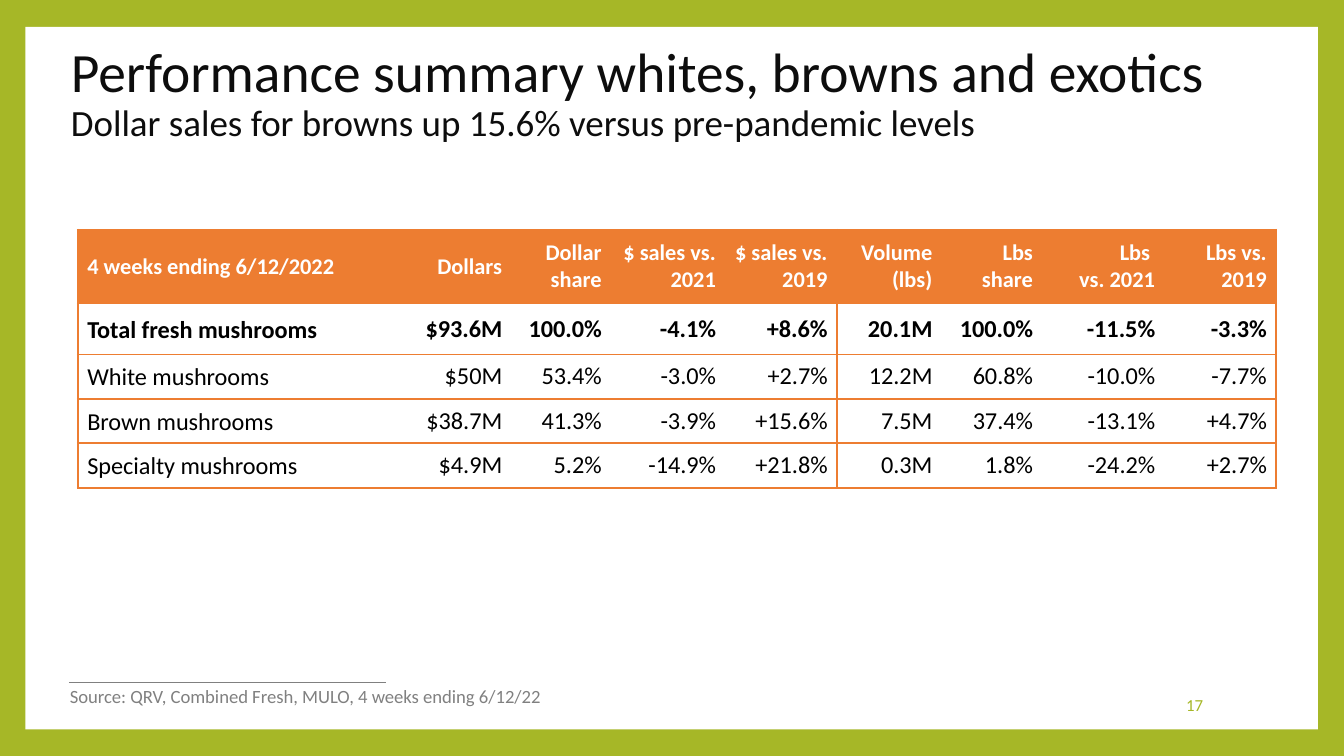
from lxml import etree
from pptx import Presentation
from pptx.dml.color import RGBColor
from pptx.enum.shapes import MSO_CONNECTOR, MSO_SHAPE
from pptx.enum.text import MSO_ANCHOR, PP_ALIGN
from pptx.oxml.ns import qn
from pptx.util import Cm, Pt

RECT = MSO_SHAPE.RECTANGLE
LINE = MSO_CONNECTOR.STRAIGHT
MIDDLE, TOP = MSO_ANCHOR.MIDDLE, MSO_ANCHOR.TOP
LEFT, RIGHT = PP_ALIGN.LEFT, PP_ALIGN.RIGHT
FONT = "Calibri"
GREEN, ORANGE, WHITE = "A6B727", "ED7D31", "FFFFFF"
GRAY, INK, BLACK = "808080", "0D0D0D", "000000"

WIDTHS = [6.02, 2.18, 1.88, 2.16, 2.11, 1.98, 1.9, 2.31, 2.11]
HEIGHTS = [1.4, 0.96, 0.84, 0.84, 0.84]
SPLIT = 4
ROWS = [
    ["4 weeks ending 6/12/2022", "Dollars", "Dollar share", "$ sales vs. 2021",
     "$ sales vs. 2019", "Volume (lbs)", "Lbs\nshare", "Lbs \vvs. 2021",
     "Lbs vs. 2019"],
    ["Total fresh mushrooms", "$93.6M", "100.0%", "-4.1%", "+8.6%", "20.1M",
     "100.0%", "-11.5%", "-3.3%"],
    ["White mushrooms", "$50M", "53.4%", "-3.0%", "+2.7%", "12.2M", "60.8%",
     "-10.0%", "-7.7%"],
    ["Brown mushrooms", "$38.7M", "41.3%", "-3.9%", "+15.6%", "7.5M", "37.4%",
     "-13.1%", "+4.7%"],
    ["Specialty mushrooms", "$4.9M", "5.2%", "-14.9%", "+21.8%", "0.3M", "1.8%",
     "-24.2%", "+2.7%"],
]


def color(code):
    return RGBColor.from_string(code)


def paint(fill, code):
    fill.solid()
    fill.fore_color.rgb = color(code)


def style(item, form):
    for name, value in form.items():
        setattr(item, name, value)


def set_font(font, size, code, bold=False):
    style(font, {"name": FONT, "size": Pt(size), "bold": bold})
    font.color.rgb = color(code)


def add_panel(slide, box):
    panel = slide.shapes.add_shape(RECT, *map(Cm, box))
    panel.shadow.inherit = False
    paint(panel.fill, WHITE)
    panel.line.fill.background()


def add_rule(slide, ends):
    rule = slide.shapes.add_connector(LINE, *map(Cm, ends))
    rule.line.color.rgb = color(GRAY)
    rule.line.width = Pt(0.79)
    etree.SubElement(rule._element.spPr, qn("a:effectLst"))


def add_text(slide, box, lines, code, align=LEFT, anchor=MIDDLE, wrap=True, space=1.0):
    frame = slide.shapes.add_textbox(*map(Cm, box)).text_frame
    style(frame, {"word_wrap": wrap, "vertical_anchor": anchor})
    para = frame.paragraphs[0]
    style(para, {"alignment": align, "line_spacing": space})
    for index, (text, size) in enumerate(lines):
        if index:
            para.add_line_break()
        run = para.add_run()
        run.text = text
        set_font(run.font, size, code)


def add_edges(cell, sides):
    props = cell._tc.get_or_add_tcPr()
    for index, side in enumerate("LRTB"):
        edge = etree.Element(qn(f"a:ln{side}"), w=str(Pt(1)))
        if side in sides:
            fill = etree.SubElement(edge, qn("a:solidFill"))
            etree.SubElement(fill, qn("a:srgbClr"), val=ORANGE)
        else:
            etree.SubElement(edge, qn("a:noFill"))
        props.insert(index, edge)


def fill_cell(cell, text, row, col):
    cell.text = text
    style(cell, {"vertical_anchor": MIDDLE, "margin_left": Cm(0.18),
                 "margin_right": Cm(0.18), "margin_top": 0, "margin_bottom": 0})
    paint(cell.fill, WHITE if row else ORANGE)
    for para in cell.text_frame.paragraphs:
        para.alignment = RIGHT if col else LEFT
        if row and not col:
            para.line_spacing = 1.07
        for run in para.runs:
            set_font(run.font, 13 if row else 12, BLACK if row else WHITE, row < 2)
    sides = "TB"
    if col in (0, SPLIT + 1):
        sides += "L"
    if col in (SPLIT, len(WIDTHS) - 1):
        sides += "R"
    add_edges(cell, sides)


def add_grid(slide, left, top):
    table = slide.shapes.add_table(
        len(ROWS), len(WIDTHS), Cm(left), Cm(top),
        Cm(sum(WIDTHS)), Cm(sum(HEIGHTS))).table
    style(table, {"first_row": False, "horz_banding": False})
    for column, width in zip(table.columns, WIDTHS):
        column.width = Cm(width)
    for line, height in zip(table.rows, HEIGHTS):
        line.height = Cm(height)
    for row, texts in enumerate(ROWS):
        for col, text in enumerate(texts):
            fill_cell(table.cell(row, col), text, row, col)


def main():
    deck = Presentation()
    style(deck, {"slide_width": Cm(25.4), "slide_height": Cm(14.29)})
    slide = deck.slides.add_slide(deck.slide_layouts[6])
    paint(slide.background.fill, GREEN)
    add_panel(slide, (0.48, 0.51, 24.43, 13.28))
    add_rule(slide, (1.3, 12.9, 7.29, 12.9))
    add_text(slide, (1.09, 0.79, 23.8, 2),
             [("Performance summary whites, browns and exotics", 29.7),
              ("Dollar sales for browns up 15.6% versus pre-pandemic levels", 19.8)],
             INK, space=0.9)
    add_text(slide, (19.43, 12.95, 3.56, 0.76), [("17", 9)], GREEN, RIGHT)
    add_text(slide, (1.07, 12.83, 9.42, 0.69),
             [("Source: QRV, Combined Fresh, MULO, 4 weeks ending 6/12/22", 10)],
             GRAY, anchor=TOP, wrap=False)
    add_grid(slide, 1.47, 4.34)
    deck.save("out.pptx")


if __name__ == "__main__":
    main()
